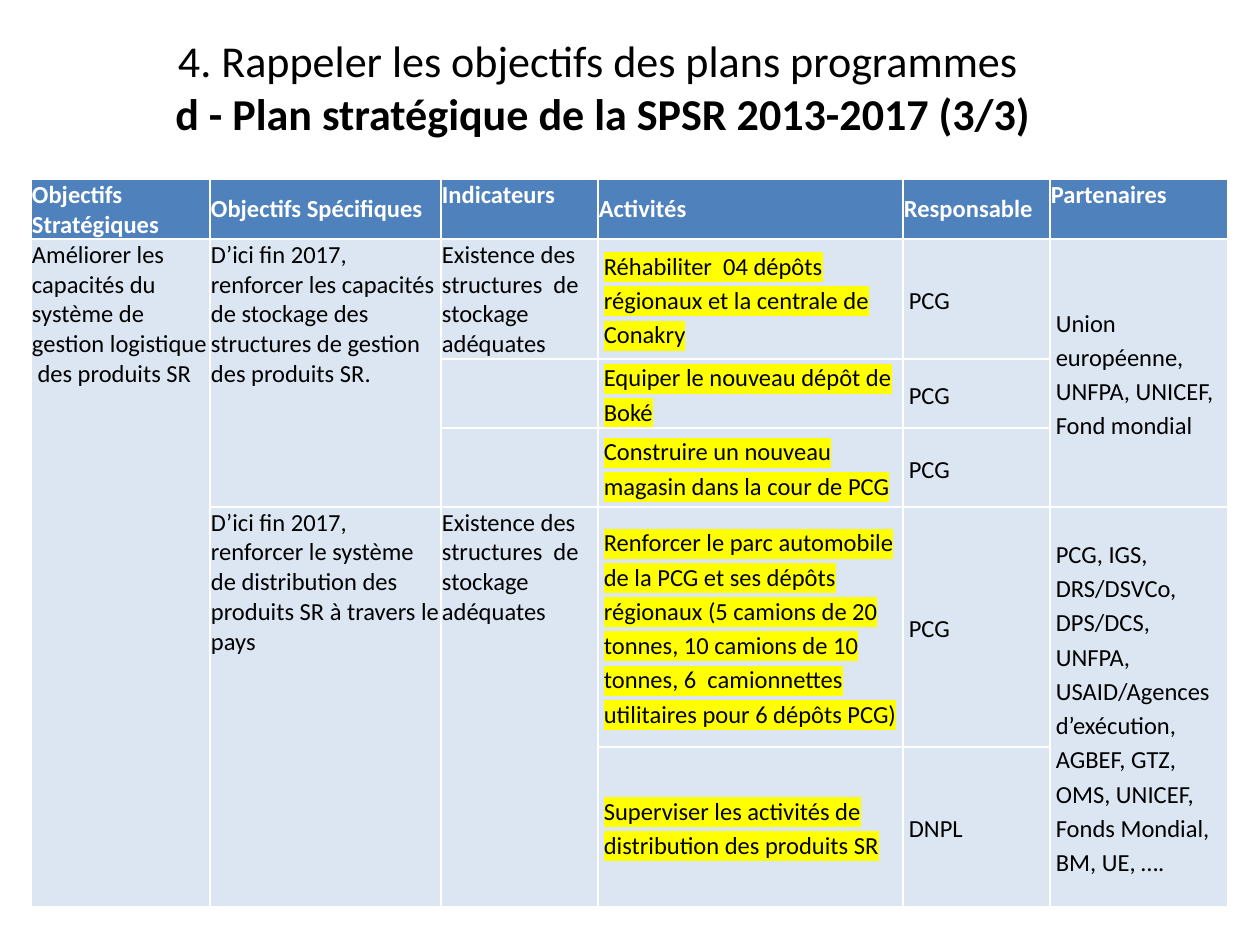
from lxml import etree
from pptx import Presentation
from pptx.dml.color import RGBColor
from pptx.enum.text import MSO_ANCHOR, PP_ALIGN
from pptx.oxml.ns import qn
from pptx.util import Pt

PX = 914400 // 126
TOP, MIDDLE = MSO_ANCHOR.TOP, MSO_ANCHOR.MIDDLE
CENTER = PP_ALIGN.CENTER
BLACK = RGBColor(0x00, 0x00, 0x00)
WHITE = RGBColor(0xFF, 0xFF, 0xFF)
BLUE = RGBColor(0x4F, 0x81, 0xBD)
PALE = RGBColor(0xDC, 0xE6, 0xF2)
YELLOW = RGBColor(0xFF, 0xFF, 0x00)


def add_run(paragraph, text, size, color, bold=False, highlight=None):
    run = paragraph.add_run()
    run.text = text
    run.font.size = Pt(size)
    run.font.bold = bold
    run.font.color.rgb = color
    run.font.name = "Calibri"
    if highlight is not None:
        mark = etree.Element(qn("a:highlight"))
        etree.SubElement(mark, qn("a:srgbClr"), val=str(highlight))
        run.font._element.find(qn("a:solidFill")).addnext(mark)


def set_borders(cell, top_width):
    props = cell._tc.get_or_add_tcPr()
    widths = {"a:lnL": 1, "a:lnR": 1, "a:lnT": top_width, "a:lnB": 1.5}
    for i, (side, width) in enumerate(widths.items()):
        line = etree.Element(qn(side), w=str(int(Pt(width))))
        fill = etree.SubElement(line, qn("a:solidFill"))
        etree.SubElement(fill, qn("a:srgbClr"), val=str(WHITE))
        props.insert(i, line)


prs = Presentation()
prs.slide_width, prs.slide_height = 1260 * PX, 945 * PX
slide = prs.slides.add_slide(prs.slide_layouts[6])

# Title
title = slide.shapes.add_textbox(31 * PX, 31 * PX, 1134 * PX, 110 * PX).text_frame
title.word_wrap = True
title.vertical_anchor = MIDDLE
heading = title.paragraphs[0]
heading.alignment = CENTER
add_run(heading, "4. Rappeler les objectifs des plans programmes", 25.2, BLACK)
heading.add_line_break()
add_run(heading, " d - Plan stratégique de la SPSR 2013-2017 (3/3)", 25.2, BLACK, True)

# Table contents: None marks a cell covered by the merge above it
structures = "Existence des structures  de stockage adéquates"
ROWS = [
    ["Objectifs Stratégiques", "Objectifs Spécifiques", "Indicateurs",
     "Activités", "Responsable", "Partenaires"],
    ["Améliorer les capacités du système de gestion logistique  des produits SR",
     "D’ici fin 2017, renforcer les capacités de stockage des structures de "
     "gestion des produits SR.",
     structures, "Réhabiliter  04 dépôts régionaux et la centrale de Conakry",
     "PCG", "Union européenne, UNFPA, UNICEF, Fond mondial"],
    [None, None, "", "Equiper le nouveau dépôt de Boké", "PCG", None],
    [None, None, "", "Construire un nouveau magasin dans la cour de PCG", "PCG", None],
    [None,
     "D’ici fin 2017, renforcer le système de distribution des produits SR "
     "à travers le pays",
     structures,
     "Renforcer le parc automobile de la PCG et ses dépôts régionaux (5 camions "
     "de 20 tonnes, 10 camions de 10 tonnes, 6  camionnettes utilitaires pour "
     "6 dépôts PCG)",
     "PCG",
     "PCG, IGS, DRS/DSVCo, DPS/DCS, UNFPA, USAID/Agences d’exécution, AGBEF, "
     "GTZ, OMS, UNICEF, Fonds Mondial, BM, UE, …."],
    [None, None, None, "Superviser les activités de distribution des produits SR",
     "DNPL", None],
]
COL_WIDTHS = [179, 231, 157, 305, 147, 178]
ROW_HEIGHTS = [60, 120, 69, 79, 240, 160]
ACTIVITIES = 3
TOP_HEADERS = ("Indicateurs", "Partenaires")

objectives = slide.shapes.add_table(
    len(ROWS), len(COL_WIDTHS), 31 * PX, 179 * PX,
    sum(COL_WIDTHS) * PX, sum(ROW_HEIGHTS) * PX).table
objectives.horz_banding = False
for column, width in zip(objectives.columns, COL_WIDTHS):
    column.width = width * PX
for row, height in zip(objectives.rows, ROW_HEIGHTS):
    row.height = height * PX

# Cells
for r, texts in enumerate(ROWS):
    header = r == 0
    for c, text in enumerate(texts):
        cell = objectives.cell(r, c)
        cell.fill.solid()
        cell.fill.fore_color.rgb = BLUE if header else PALE
        set_borders(cell, 1 if header else 1.5)
        if not text:
            continue
        paragraph = cell.text_frame.paragraphs[0]
        detail = not header and c >= ACTIVITIES
        cell.margin_left = cell.margin_right = (6 if detail else 1) * PX
        cell.margin_top = (0 if detail else 1) * PX
        cell.margin_bottom = 0
        centred = detail or (header and text not in TOP_HEADERS)
        cell.vertical_anchor = MIDDLE if centred else TOP
        if detail:
            paragraph.line_spacing = 1.15
        add_run(paragraph, text, 14, WHITE if header else BLACK, header,
                YELLOW if detail and c == ACTIVITIES else None)

# Merges: each text spans the covered cells below it
for c in range(len(COL_WIDTHS)):
    for r in range(len(ROWS)):
        last = r
        while last + 1 < len(ROWS) and ROWS[last + 1][c] is None:
            last += 1
        if ROWS[r][c] is not None and last > r:
            objectives.cell(r, c).merge(objectives.cell(last, c))

prs.save("out.pptx")
